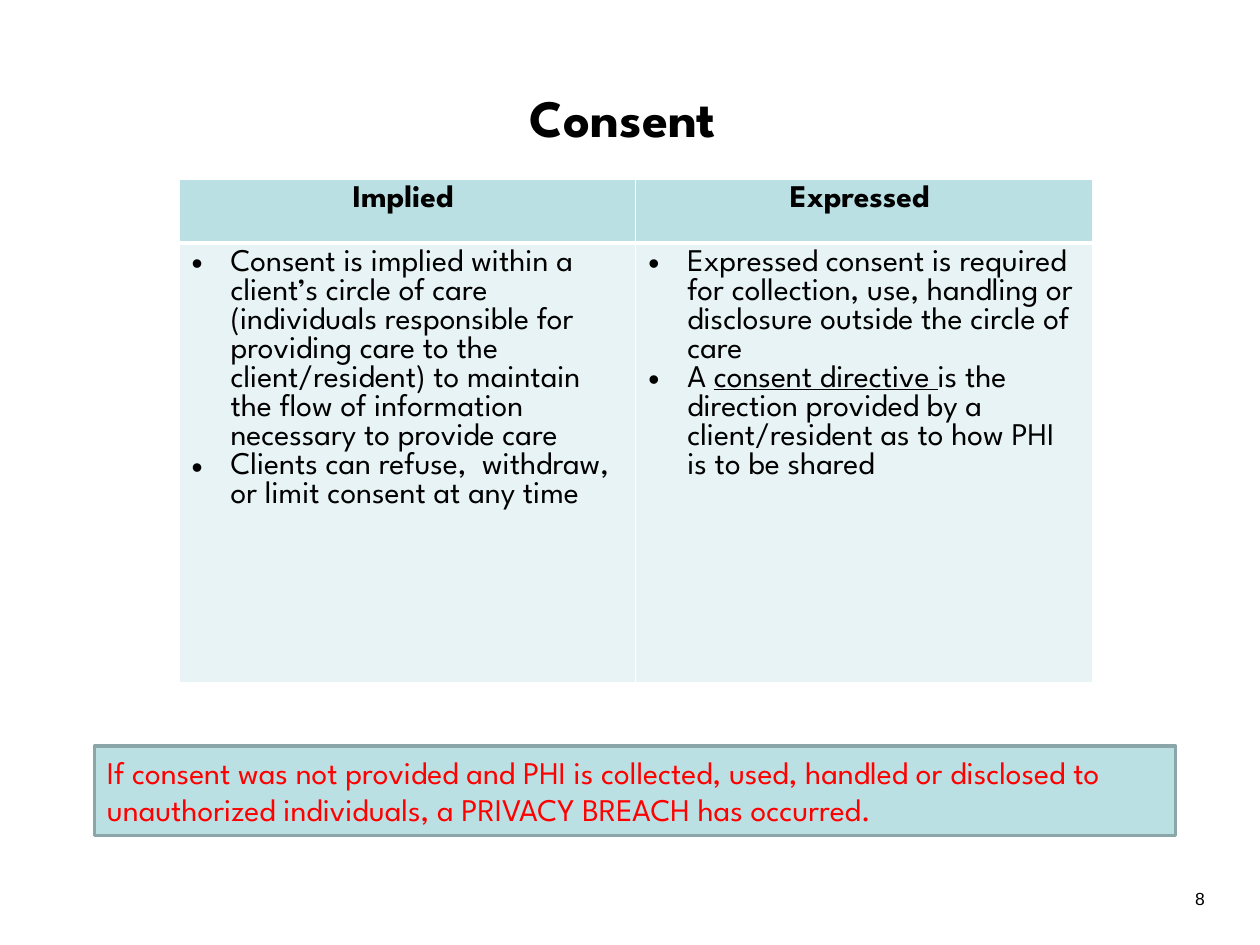
from lxml import etree
from pptx import Presentation
from pptx import util as u
from pptx.dml.color import RGBColor
from pptx.enum import shapes, text
from pptx.oxml import ns

FONT = "League Spartan"
HEADS = ["Implied ", "Expressed "]
POINTS = [
    [
        ["Consent is implied within a client’s circle of care (individuals responsible "
         "for providing care to the client/resident) to maintain the flow of information "
         "necessary to provide care"],
        ["Clients can refuse,  withdraw, or limit consent at any time"],
    ],
    [
        ["Expressed consent is required for collection, use, handling or disclosure "
         "outside the circle of care"],
        ["A ", "consent directive ",
         "is the direction provided by a client/resident as to how PHI is to be shared"],
    ],
]
ALERT = ("If consent was not provided and PHI is collected, used, handled or disclosed "
         "to unauthorized individuals, a PRIVACY BREACH has occurred.")


def paint(color, code):
    """Set a color format from a hex string."""
    color.rgb = RGBColor.from_string(code)


def fill(item, code):
    """Give a shape or cell a solid fill."""
    item.fill.solid()
    paint(item.fill.fore_color, code)


def style(para, size, code="000000", bold=False, name=FONT, align="LEFT"):
    """Set the font and alignment of a paragraph."""
    para.alignment = getattr(text.PP_ALIGN, align)
    font = para.font
    font.name, font.size, font.bold = name, u.Pt(size), bold
    paint(font.color, code)


def label(slide, box, words, size, anchor="TOP", **look):
    """Add a text box holding one styled paragraph."""
    frame = slide.shapes.add_textbox(*map(u.Inches, box)).text_frame
    frame.word_wrap = True
    frame.vertical_anchor = getattr(text.MSO_ANCHOR, anchor)
    frame.text = words
    style(frame.paragraphs[0], size, **look)


def bullet(para):
    """Give a paragraph a hanging bullet."""
    props = para._p.get_or_add_pPr()
    hang = u.Inches(0.31)
    props.set("marL", str(hang))
    props.set("indent", str(-hang))
    etree.SubElement(props, ns.qn("a:buFont"), typeface="Arial")
    etree.SubElement(props, ns.qn("a:buChar"), char="•")


def edge(cell, widths):
    """Draw white cell borders, with widths in points by side."""
    props = cell._tc.get_or_add_tcPr()
    for spot, (side, width) in enumerate(widths.items()):
        line = etree.Element(ns.qn(f"a:ln{side}"), w=str(u.Pt(width)))
        solid = etree.SubElement(line, ns.qn("a:solidFill"))
        etree.SubElement(solid, ns.qn("a:srgbClr"), val="FFFFFF")
        props.insert(spot, line)


def grid(slide, box):
    """Add the table that compares both kinds of consent."""
    left, top, width, height = box
    table = slide.shapes.add_table(2, len(HEADS), *map(u.Inches, box)).table
    head = 0.51
    for row, size in zip(table.rows, (head, height - head)):
        row.height = u.Inches(size)
    for col, (title, points) in enumerate(zip(HEADS, POINTS)):
        table.columns[col].width = u.Inches(width / len(HEADS))
        cell = table.cell(0, col)
        cell.text = title
        style(cell.text_frame.paragraphs[0], 18, bold=True, align="CENTER")
        fill(cell, "BBE0E3")
        edge(cell, {"L": 1, "R": 1, "T": 1, "B": 3})
        cell = table.cell(1, col)
        fill(cell, "E7F3F4")
        edge(cell, {"L": 1, "R": 1, "T": 3, "B": 1})
        frame = cell.text_frame
        for num, parts in enumerate(points):
            para = frame.add_paragraph() if num else frame.paragraphs[0]
            bullet(para)
            style(para, 18)
            for spot, part in enumerate(parts):
                run = para.add_run()
                run.text = part
                if spot == 1:
                    run.font.underline = True


def alert(slide, box):
    """Add the framed warning about a breach."""
    shape = slide.shapes.add_shape(shapes.MSO_SHAPE.RECTANGLE, *map(u.Inches, box))
    shape.shadow.inherit = False
    fill(shape, "BBE0E3")
    paint(shape.line.color, "8AA6A8")
    shape.line.width = u.Pt(2)
    frame = shape.text_frame
    frame.word_wrap = True
    frame.vertical_anchor = text.MSO_ANCHOR.MIDDLE
    frame.text = ALERT
    para = frame.paragraphs[0]
    style(para, 18, "FF0000")
    para.line_spacing = u.Pt(21)


def main():
    """Build and save the slide."""
    deck = Presentation()
    deck.slide_width, deck.slide_height = u.Inches(10), u.Inches(7.5)
    slide = deck.slides.add_slide(deck.slide_layouts[5])
    title = slide.shapes.title
    title.left, title.top, title.width, title.height = map(u.Inches, (0.5, 0.3, 9, 1.25))
    title.text_frame.vertical_anchor = text.MSO_ANCHOR.MIDDLE
    title.text_frame.text = "Consent "
    style(title.text_frame.paragraphs[0], 30, bold=True, align="CENTER")
    grid(slide, (1.42, 1.42, 7.25, 4))
    alert(slide, (0.75, 5.92, 8.58, 0.71))
    label(slide, (7.58, 7, 2.08, 0.5), "8", 10, name="Arial", align="RIGHT")
    deck.save("out.pptx")


if __name__ == "__main__":
    main()
